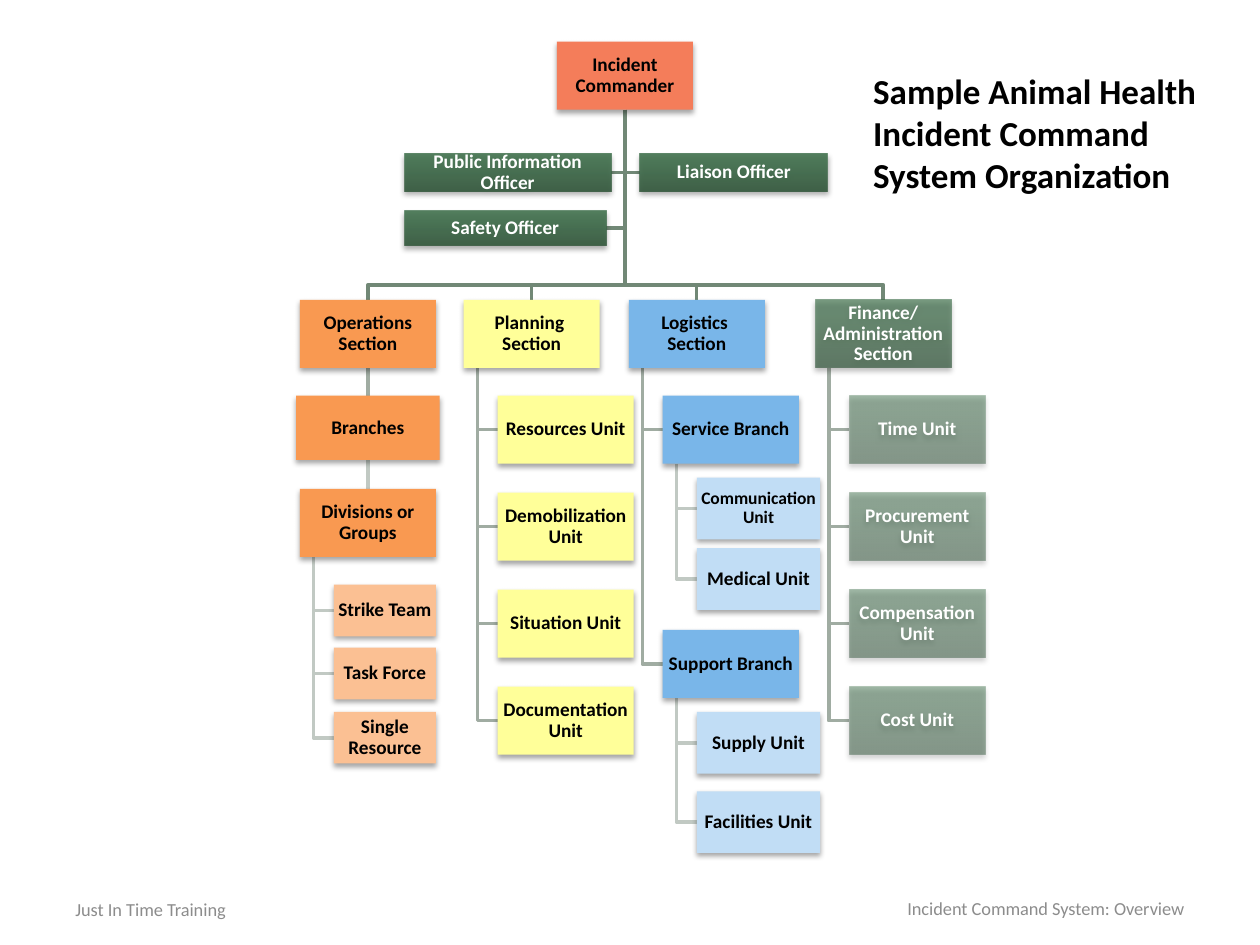
from dataclasses import dataclass

from lxml import etree
from pptx import Presentation
from pptx.dml.color import RGBColor
from pptx.enum.shapes import MSO_CONNECTOR, MSO_SHAPE
from pptx.enum.text import MSO_ANCHOR, MSO_AUTO_SIZE, PP_ALIGN
from pptx.oxml.ns import qn
from pptx.util import Inches, Pt

RECTANGLE = MSO_SHAPE.RECTANGLE
STRAIGHT = MSO_CONNECTOR.STRAIGHT
TOP, MIDDLE = MSO_ANCHOR.TOP, MSO_ANCHOR.MIDDLE
LEFT, CENTER, RIGHT = PP_ALIGN.LEFT, PP_ALIGN.CENTER, PP_ALIGN.RIGHT
NO_AUTO_SIZE = MSO_AUTO_SIZE.NONE

BLACK = RGBColor(0x00, 0x00, 0x00)
WHITE = RGBColor(0xFF, 0xFF, 0xFF)
GRAY = RGBColor(0x8C, 0x8C, 0x8C)
RED = RGBColor(0xF4, 0x7D, 0x5A)
ORANGE = RGBColor(0xF9, 0x99, 0x51)
PEACH = RGBColor(0xFB, 0xC0, 0x93)
YELLOW = RGBColor(0xFF, 0xFF, 0x99)
BLUE = RGBColor(0x79, 0xB6, 0xE9)
PALE_BLUE = RGBColor(0xC1, 0xDD, 0xF5)
DARK_GREEN = RGBColor(0x34, 0x58, 0x3D)
GREEN = RGBColor(0x43, 0x72, 0x4F)
LIGHT_GREEN = RGBColor(0x43, 0x73, 0x4F)
GREEN_STOPS = ((0, DARK_GREEN), (80, GREEN), (100, LIGHT_GREEN))
LINE_DARK = RGBColor(0x71, 0x88, 0x76)
LINE_MEDIUM = RGBColor(0xA0, 0xAC, 0xA2)
LINE_LIGHT = RGBColor(0xC1, 0xC9, 0xC3)

BOX_WIDTH, BOX_HEIGHT = 1.08, 0.54
SECTION_TOP, UNIT_TOP, UNIT_STEP = 2.38, 3.14, 0.77
BUS_Y = 2.26


@dataclass
class Box:
    """A chart box; fill is a colour, or the opacity in percent of the green gradient."""
    text: str
    left: float
    top: float
    fill: object
    width: float = BOX_WIDTH
    height: float = BOX_HEIGHT
    size: float = 11

    @property
    def center(self):
        return self.left + self.width / 2

    @property
    def middle(self):
        return self.top + self.height / 2

    @property
    def bottom(self):
        return self.top + self.height


class ChartSlide:
    font_name = "Calibri"
    line_width = Pt(2)

    def __init__(self, slide):
        self.slide = slide

    def set_text(self, shape, text, size, color, bold=False, align=LEFT, anchor=MIDDLE):
        frame = shape.text_frame
        frame.text = text
        frame.word_wrap = True
        frame.vertical_anchor = anchor
        paragraph = frame.paragraphs[0]
        paragraph.alignment = align
        for run in paragraph.runs:
            run.font.name = self.font_name
            run.font.size = Pt(size)
            run.font.bold = bold
            run.font.color.rgb = color
        return paragraph

    def title(self, text, left, top, width, height):
        shape = self.slide.shapes.title
        shape.left, shape.top = Inches(left), Inches(top)
        shape.width, shape.height = Inches(width), Inches(height)
        self.set_text(shape, text, 20, BLACK, bold=True, anchor=TOP)
        shape.text_frame.auto_size = NO_AUTO_SIZE

    def footer(self, text, left, top, width, height, align):
        shape = self.slide.shapes.add_textbox(
            Inches(left), Inches(top), Inches(width), Inches(height))
        self.set_text(shape, text, 10.5, GRAY, align=align)

    def green_gradient(self, shape, opacity):
        shape.fill.gradient()
        shape.fill.gradient_angle = 90
        stops = shape._element.spPr.find(qn("a:gradFill")).find(qn("a:gsLst"))
        for stop in list(stops):
            stops.remove(stop)
        for position, color in GREEN_STOPS:
            stop = etree.SubElement(stops, qn("a:gs"), pos=str(position * 1000))
            value = etree.SubElement(stop, qn("a:srgbClr"), val=str(color))
            etree.SubElement(value, qn("a:alpha"), val=str(opacity * 1000))

    def drop_shadow(self, shape):
        shape.shadow.inherit = False
        effects = shape._element.spPr.find(qn("a:effectLst"))
        shadow = etree.SubElement(effects, qn("a:outerShdw"), blurRad=str(Pt(3.1)),
                                  dist=str(Pt(1.8)), dir="5400000", rotWithShape="0")
        color = etree.SubElement(shadow, qn("a:srgbClr"), val=str(BLACK))
        etree.SubElement(color, qn("a:alpha"), val="35000")

    def box(self, box):
        shape = self.slide.shapes.add_shape(
            RECTANGLE, Inches(box.left), Inches(box.top), Inches(box.width), Inches(box.height))
        solid = isinstance(box.fill, RGBColor)
        if solid:
            shape.fill.solid()
            shape.fill.fore_color.rgb = box.fill
        else:
            self.green_gradient(shape, box.fill)
        shape.line.fill.background()
        self.drop_shadow(shape)
        frame = shape.text_frame
        frame.margin_left = frame.margin_right = Inches(0.01)
        frame.margin_top = frame.margin_bottom = Inches(0.01)
        paragraph = self.set_text(shape, box.text, box.size, BLACK if solid else WHITE,
                                  bold=True, align=CENTER)
        paragraph.line_spacing = 0.9

    def elbow(self, points, color):
        start, *others = [(Inches(x), Inches(y)) for x, y in points]
        builder = self.slide.shapes.build_freeform(*start)
        builder.add_line_segments(others, close=False)
        shape = builder.convert_to_shape()
        shape.fill.background()
        shape.line.color.rgb = color
        shape.line.width = self.line_width
        shape.shadow.inherit = False

    def drop(self, parent, child, color):
        """Straight line from a box down to the one below it."""
        x = Inches(parent.center)
        line = self.slide.shapes.add_connector(
            STRAIGHT, x, Inches(parent.bottom), x, Inches(child.top))
        line.line.color.rgb = color
        line.line.width = self.line_width
        etree.SubElement(line._element.spPr, qn("a:effectLst"))

    def hang(self, parent, children, color):
        """Elbows from the lower left of a box to the side of each child."""
        x = parent.left + parent.width / 10
        for child in children:
            self.elbow([(x, parent.bottom), (x, child.middle), (child.left, child.middle)], color)


def unit_column(names, left, fill):
    return [Box(name, left, UNIT_TOP + row * UNIT_STEP, fill) for row, name in enumerate(names)]


def small_boxes(items, left, fill, width, height):
    return [Box(name, left, top, fill, width, height) for name, top in items]


def main():
    presentation = Presentation()
    presentation.slide_width, presentation.slide_height = Inches(10), Inches(7.5)
    chart = ChartSlide(presentation.slides.add_slide(presentation.slide_layouts[5]))

    commander = Box("Incident Commander", 4.42, 0.33, RED)
    officers = [Box("Public Information Officer", 3.21, 1.22, 90, 1.64, 0.3),
                Box("Liaison Officer", 5.08, 1.22, 90, 1.49, 0.3),
                Box("Safety Officer", 3.21, 1.67, 90, 1.6, 0.28)]

    operations = Box("Operations Section", 2.38, SECTION_TOP, ORANGE)
    planning = Box("Planning \vSection", 3.68, SECTION_TOP, YELLOW)
    logistics = Box("Logistics \vSection", 4.99, SECTION_TOP, BLUE)
    finance = Box("Finance/\vAdministration Section", 6.47, SECTION_TOP, 70)
    sections = [operations, planning, logistics, finance]

    branches = Box("Branches", 2.35, UNIT_TOP, ORANGE, 1.14, 0.51)
    divisions = Box("Divisions or Groups", 2.38, 3.88, ORANGE)
    teams = small_boxes([("Strike Team", 4.64), ("Task Force", 5.14), ("Single Resource", 5.65)],
                        2.65, PEACH, 0.81, 0.41)
    planning_units = unit_column(["Resources Unit", "Demobilization Unit", "Situation Unit",
                                  "Documentation Unit"], 3.95, YELLOW)
    service = Box("Service Branch", 5.26, UNIT_TOP, BLUE)
    support = Box("Support Branch", 5.26, 5, BLUE)
    service_units = small_boxes([("Communication Unit", 3.79), ("Medical Unit", 4.35)],
                                5.53, PALE_BLUE, 0.98, 0.49)
    service_units[0].size = 10
    support_units = small_boxes([("Supply Unit", 5.65), ("Facilities Unit", 6.28)],
                                5.53, PALE_BLUE, 0.98, 0.49)
    finance_units = unit_column(["Time Unit", "Procurement Unit", "Compensation Unit",
                                 "Cost Unit"], 6.74, 50)

    spine = commander.center
    for officer in officers:
        side = officer.left if officer.left > spine else officer.left + officer.width
        chart.elbow([(spine, commander.bottom), (spine, officer.middle), (side, officer.middle)],
                    LINE_DARK)
    for section in sections:
        chart.elbow([(spine, commander.bottom), (spine, BUS_Y), (section.center, BUS_Y),
                     (section.center, section.top)], LINE_DARK)
    chart.drop(operations, branches, LINE_MEDIUM)
    chart.drop(branches, divisions, LINE_LIGHT)
    for parent, children, color in [
            (divisions, teams, LINE_LIGHT), (planning, planning_units, LINE_MEDIUM),
            (logistics, [service, support], LINE_MEDIUM), (service, service_units, LINE_LIGHT),
            (support, support_units, LINE_LIGHT), (finance, finance_units, LINE_MEDIUM)]:
        chart.hang(parent, children, color)

    for box in [commander, *sections, branches, divisions, *teams, *planning_units, service,
                *service_units, support, *support_units, *finance_units, *officers]:
        chart.box(box)

    chart.footer("Just In Time Training", 0.5, 7.08, 2.33, 0.27, LEFT)
    chart.footer("Incident Command System: Overview", 6.33, 7.08, 3.17, 0.25, RIGHT)
    chart.title("Sample Animal Health Incident Command System Organization", 6.83, 0.5, 2.83, 1.11)
    presentation.save("out.pptx")


if __name__ == "__main__":
    main()
